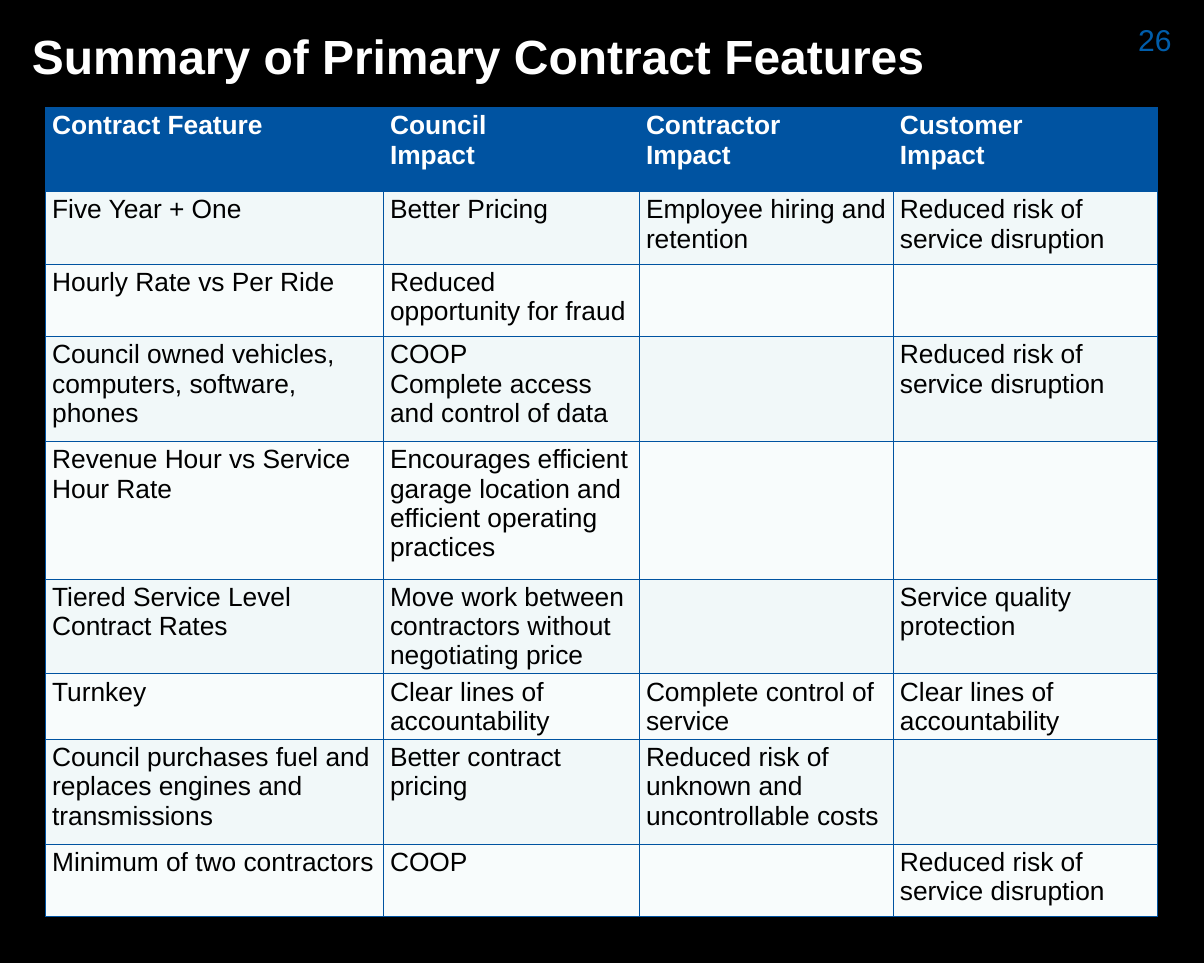
import pptx
import pptx.util
import pptx.dml.color
import pptx.enum.text
import pptx.oxml
import pptx.oxml.ns

BLUE = "0053A1"
BANDS = ["F8FCFC", "F1F8F9"]
COLUMN_WIDTHS = [4.99, 3.78, 3.75, 3.9]
ROW_HEIGHTS = [1.24, 1.07, 1.07, 1.55, 2.03, 1.4, 0.96, 1.55, 1.07]
ROWS = [
    ["Contract Feature", "Council\nImpact", "Contractor\nImpact", "Customer\nImpact"],
    ["Five Year + One", "Better Pricing", "Employee hiring and retention",
     "Reduced risk of service disruption"],
    ["Hourly Rate vs Per Ride", "Reduced opportunity for fraud", "", ""],
    ["Council owned vehicles, computers, software, phones",
     "COOP\nComplete access and control of data", "",
     "Reduced risk of service disruption"],
    ["Revenue Hour vs Service Hour Rate",
     "Encourages efficient garage location and efficient operating practices", "", ""],
    ["Tiered Service Level Contract Rates",
     "Move work between contractors without negotiating price", "",
     "Service quality protection"],
    ["Turnkey", "Clear lines of accountability", "Complete control of service",
     "Clear lines of accountability"],
    ["Council purchases fuel and replaces engines and transmissions",
     "Better contract pricing", "Reduced risk of unknown and uncontrollable costs", ""],
    ["Minimum of two contractors", "COOP", "", "Reduced risk of service disruption"],
]


def color(hex_string):
    return pptx.dml.color.RGBColor.from_string(hex_string)


def format_text(text_frame, size, hex_string, bold=False):
    for paragraph in text_frame.paragraphs:
        paragraph.alignment = pptx.enum.text.PP_ALIGN.LEFT
        paragraph.font.name = "Arial"
        paragraph.font.size = pptx.util.Pt(size)
        paragraph.font.bold = bold
        paragraph.font.color.rgb = color(hex_string)


inches = pptx.util.Inches
presentation = pptx.Presentation()
presentation.slide_width = inches(17.78)
presentation.slide_height = inches(14.22)
slide = presentation.slides.add_slide(presentation.slide_layouts[5])
slide.background.fill.solid()
slide.background.fill.fore_color.rgb = color("000000")

title = slide.shapes.title
title.left, title.top, title.width, title.height = map(inches, (0.29, 0, 16, 1.64))
title_frame = title.text_frame
title_frame.text = "Summary of Primary Contract Features"
title_frame.auto_size = pptx.enum.text.MSO_AUTO_SIZE.NONE
title_frame.vertical_anchor = pptx.enum.text.MSO_ANCHOR.MIDDLE
title_frame.margin_left = title_frame.margin_right = inches(0.18)
title_frame.margin_top = title_frame.margin_bottom = inches(0.09)
format_text(title_frame, 51, "FFFFFF", True)

table = slide.shapes.add_table(
    len(ROWS), len(COLUMN_WIDTHS), inches(0.67), inches(1.59),
    inches(sum(COLUMN_WIDTHS)), inches(sum(ROW_HEIGHTS))).table
for column, width in zip(table.columns, COLUMN_WIDTHS):
    column.width = inches(width)
for row, height in zip(table.rows, ROW_HEIGHTS):
    row.height = inches(height)

for row_index, texts in enumerate(ROWS):
    is_header = row_index == 0
    for column_index, text in enumerate(texts):
        cell = table.cell(row_index, column_index)
        cell.text = text
        format_text(cell.text_frame, 28, "FFFFFF" if is_header else "000000", is_header)
        cell.fill.solid()
        cell.fill.fore_color.rgb = color(BLUE if is_header else BANDS[row_index % 2])
        properties = cell._tc.get_or_add_tcPr()
        for position, side in enumerate(["lnL", "lnR", "lnT", "lnB"]):
            border = pptx.oxml.parse_xml(
                f'<a:{side} {pptx.oxml.ns.nsdecls("a")} w="12700"><a:solidFill>'
                f'<a:srgbClr val="{BLUE}"/></a:solidFill></a:{side}>')
            properties.insert(position, border)

page_number = slide.shapes.add_textbox(*map(inches, (16.71, 0.27, 0.97, 1.02)))
page_number.text_frame.word_wrap = True
page_number.text_frame.text = "26"
format_text(page_number.text_frame, 32, "005DAA")

presentation.save("out.pptx")
